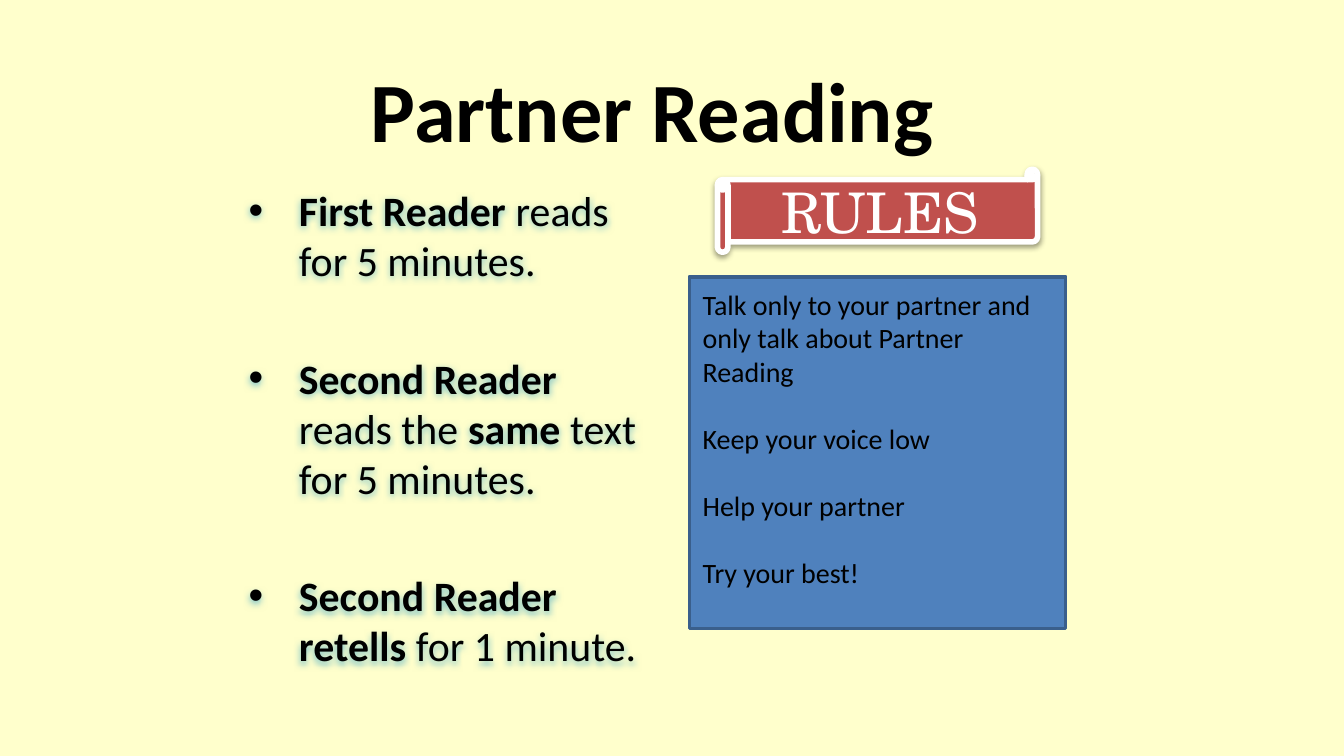
import pptx
import pptx.dml.color
import pptx.enum.shapes
import pptx.enum.text
import pptx.oxml
import pptx.oxml.ns
import pptx.util
from lxml import etree
from pptx.util import Cm, Pt

COLORS = {
    "background": "FFFFCC",
    "text": "000000",
    "white": "FFFFFF",
    "panel": "4F81BD",
    "panel_line": "3A5F8C",
    "scroll": "C0504D",
    "glow": "4BACC6",
}
STEPS = [
    [("First Reader ", True), ("reads for 5 minutes.", False)],
    [("Second Reader ", True), ("reads the ", False), ("same", True),
     (" text for 5 minutes.", False)],
    [("Second Reader retells", True), (" for 1 minute.", False)],
]
RULES = [
    "Talk only to your partner and only talk about Partner Reading",
    "Keep your voice low",
    "Help your partner",
    "Try your best!",
]


def rgb(name):
    """Return the named colour."""
    return pptx.dml.color.RGBColor.from_string(COLORS[name])


def add_run(p, text, size, bold=False, color="text", font="Calibri"):
    """Add a formatted run to a paragraph."""
    r = p.add_run()
    r.text = text
    r.font.size = Pt(size)
    r.font.bold = bold
    r.font.name = font
    r.font.color.rgb = rgb(color)


def add_paragraph(tf, index, gap=0, align="LEFT"):
    """Return the paragraph at index, spaced from the one before it."""
    p = tf.paragraphs[0] if index == 0 else tf.add_paragraph()
    p.alignment = getattr(pptx.enum.text.PP_ALIGN, align)
    if index:
        p.space_before = Pt(gap)
    return p


def add_shadow(sp, color, alpha, blur, dist):
    """Give a shape an outer shadow that falls straight down."""
    sp.shadow.inherit = False
    effects = sp._element.spPr.find(pptx.oxml.ns.qn("a:effectLst"))
    shadow = etree.SubElement(
        effects, pptx.oxml.ns.qn("a:outerShdw"), blurRad=str(Pt(blur)),
        dist=str(Pt(dist)), dir="5400000", algn="ctr", rotWithShape="0")
    clr = etree.SubElement(shadow, pptx.oxml.ns.qn("a:srgbClr"), val=COLORS[color])
    etree.SubElement(clr, pptx.oxml.ns.qn("a:alpha"), val=str(alpha * 1000))


def add_box(s, box, anchor="TOP"):
    """Add a wrapping text box."""
    sp = s.shapes.add_textbox(*map(Cm, box))
    sp.text_frame.word_wrap = True
    sp.text_frame.vertical_anchor = getattr(pptx.enum.text.MSO_ANCHOR, anchor)
    return sp


def add_filled(s, kind, box, fill, line, width):
    """Add a filled and outlined preset shape."""
    sp = s.shapes.add_shape(getattr(pptx.enum.shapes.MSO_SHAPE, kind), *map(Cm, box))
    sp.shadow.inherit = False
    sp.fill.solid()
    sp.fill.fore_color.rgb = rgb(fill)
    sp.line.color.rgb = rgb(line)
    sp.line.width = Pt(width)
    return sp


def add_title(s, box):
    """Place the slide title."""
    tf = add_box(s, box, "MIDDLE").text_frame
    add_run(add_paragraph(tf, 0, align="CENTER"), "Partner Reading", 45.2, bold=True)


def add_steps(s, box):
    """Place the bulleted reading steps."""
    sp = add_box(s, box)
    add_shadow(sp, "glow", 70, 4, 1)
    for i, step in enumerate(STEPS):
        p = add_paragraph(sp.text_frame, i, gap=36)
        pPr = p._p.get_or_add_pPr()
        pPr.set("marL", str(Cm(0.95)))
        pPr.set("indent", str(-Cm(0.95)))
        etree.SubElement(pPr, pptx.oxml.ns.qn("a:buFont"), typeface="Arial")
        etree.SubElement(pPr, pptx.oxml.ns.qn("a:buChar"), char="•")
        for text, bold in step:
            add_run(p, text, 22.4, bold)


def add_rules(s, box):
    """Place the panel that lists the rules."""
    sp = add_filled(s, "RECTANGLE", box, "panel", "panel_line", 2)
    tf = sp.text_frame
    tf.word_wrap = True
    tf.vertical_anchor = pptx.enum.text.MSO_ANCHOR.TOP
    tf.margin_top = Cm(0.2)
    for i, rule in enumerate(RULES):
        add_run(add_paragraph(tf, i, gap=18), rule, 15)


def add_banner(s, box):
    """Place the scroll that heads the rules."""
    sp = add_filled(s, "HORIZONTAL_SCROLL", box, "scroll", "white", 3)
    add_shadow(sp, "text", 38, 3.1, 1.6)
    tf = sp.text_frame
    tf.word_wrap = False
    tf.vertical_anchor = pptx.enum.text.MSO_ANCHOR.MIDDLE
    add_run(add_paragraph(tf, 0, align="CENTER"), "RULES", 30,
            color="white", font="TeX Gyre Schola")


def main():
    """Build and save the slide."""
    prs = pptx.Presentation()
    prs.slide_width, prs.slide_height = Cm(25.4), Cm(14.29)
    s = prs.slides.add_slide(prs.slide_layouts[6])
    s.background.fill.solid()
    s.background.fill.fore_color.rgb = rgb("background")
    add_title(s, (0.9, 0.85, 22.86, 2.4))
    add_steps(s, (4.45, 3.37, 7.92, 9.37))
    add_rules(s, (13.03, 5.23, 7.11, 6.65))
    add_banner(s, (13.56, 3.2, 6.05, 1.57))
    prs.save("out.pptx")


if __name__ == "__main__":
    main()
